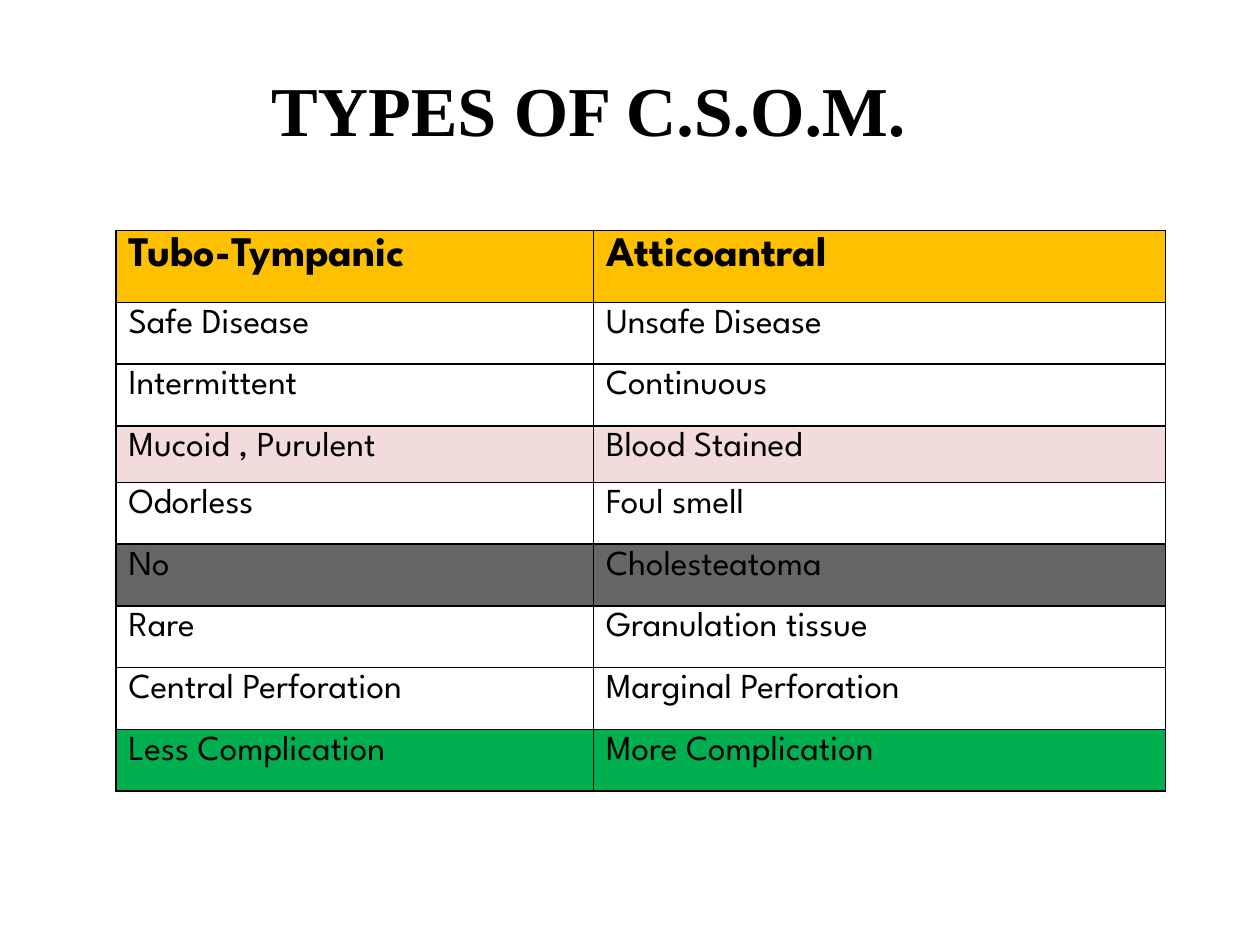
from lxml import etree
from pptx import Presentation
from pptx.dml.color import RGBColor
from pptx.enum.text import MSO_ANCHOR, PP_ALIGN
from pptx.oxml.ns import qn
from pptx.util import Inches, Pt

CENTER = PP_ALIGN.CENTER
TOP = MSO_ANCHOR.TOP
BLACK = RGBColor(0x00, 0x00, 0x00)
WHITE = RGBColor(0xFF, 0xFF, 0xFF)
AMBER = RGBColor(0xFF, 0xC0, 0x00)
PINK = RGBColor(0xF2, 0xDC, 0xDB)
GRAY = RGBColor(0x66, 0x66, 0x66)
GREEN = RGBColor(0x00, 0xB0, 0x50)


def write_text(frame, text, font="League Spartan", size=20, bold=False, align=None):
    paragraph = frame.paragraphs[0]
    paragraph.alignment = align
    run = paragraph.add_run()
    run.text = text
    run.font.name = font
    run.font.size = Pt(size)
    run.font.bold = bold
    run.font.color.rgb = BLACK


def add_borders(cell):
    properties = cell._tc.get_or_add_tcPr()
    for side in ("a:lnL", "a:lnR", "a:lnT", "a:lnB"):
        line = etree.SubElement(properties, qn(side), w=str(Pt(1)))
        fill = etree.SubElement(line, qn("a:solidFill"))
        etree.SubElement(fill, qn("a:srgbClr"), val=str(BLACK))


presentation = Presentation()
presentation.slide_width = Inches(10)
presentation.slide_height = Inches(7.5)
slide = presentation.slides.add_slide(presentation.slide_layouts[5])

title = slide.shapes.title
title.left, title.top = Inches(0.17), Inches(0.42)
title.width, title.height = Inches(9), Inches(1.25)
title.text_frame.vertical_anchor = TOP
title.text_frame.margin_top = Inches(0.11)
write_text(title.text_frame, "TYPES OF C.S.O.M.", font="Times New Roman",
           size=40, bold=True, align=CENTER)

rows = [
    ("Tubo-Tympanic", "Atticoantral", AMBER, 0.57),
    ("Safe Disease", "Unsafe Disease", WHITE, 0.49),
    ("Intermittent", "Continuous", WHITE, 0.49),
    ("Mucoid , Purulent", "Blood Stained", PINK, 0.45),
    ("Odorless", "Foul smell", WHITE, 0.49),
    ("No", "Cholesteatoma", GRAY, 0.49),
    ("Rare", "Granulation tissue", WHITE, 0.49),
    ("Central Perforation", "Marginal Perforation", WHITE, 0.49),
    ("Less Complication", "More Complication", GREEN, 0.49),
]
table = slide.shapes.add_table(len(rows), 2, Inches(0.92), Inches(1.83),
                               Inches(8.33), Inches(4.46)).table
table.columns[0].width = Inches(3.79)
table.columns[1].width = Inches(4.54)

for row_index, (tubotympanic, atticoantral, color, height) in enumerate(rows):
    table.rows[row_index].height = Inches(height)
    is_header = row_index == 0
    for column_index, text in enumerate((tubotympanic, atticoantral)):
        cell = table.cell(row_index, column_index)
        add_borders(cell)
        cell.fill.solid()
        cell.fill.fore_color.rgb = color
        write_text(cell.text_frame, text, size=24 if is_header else 20, bold=is_header)

presentation.save("out.pptx")
